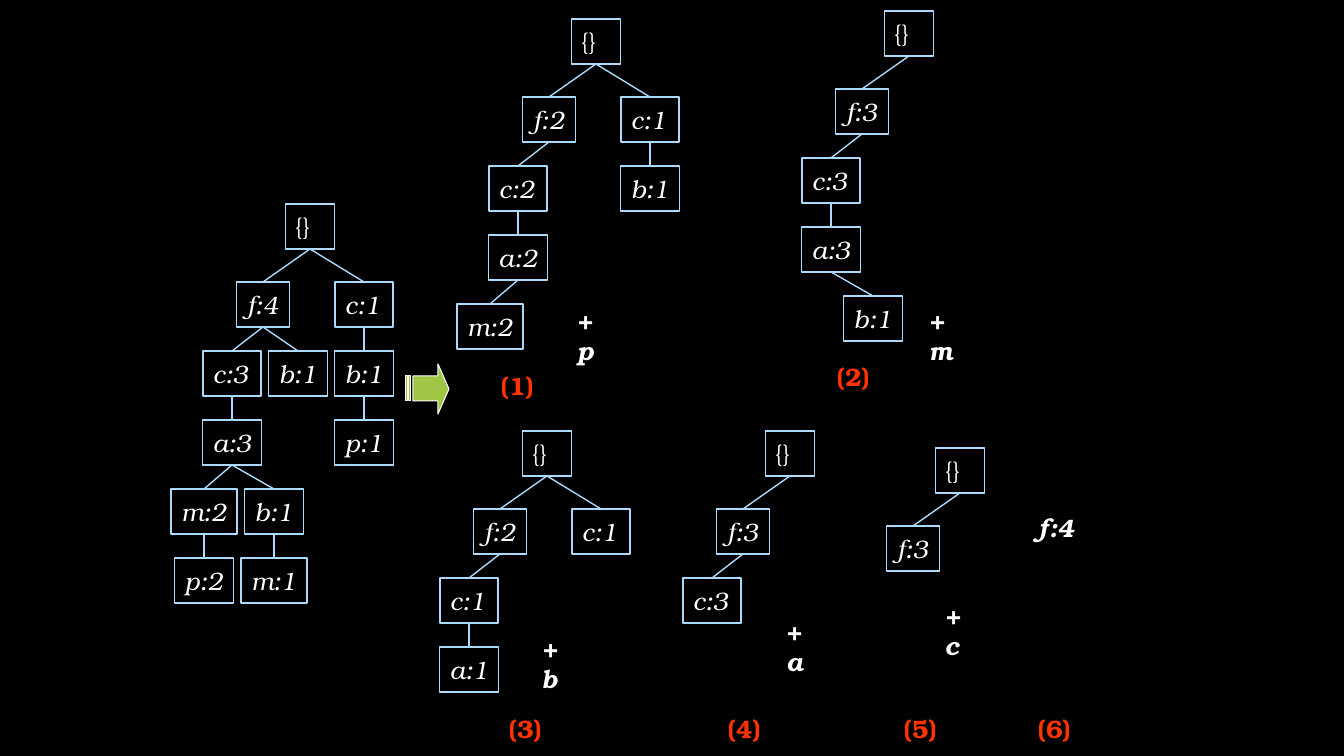
"""Builds a slide of an FP-tree and its six conditional subtrees."""
from lxml import etree
from pptx import Presentation
from pptx.dml.color import RGBColor
from pptx.enum.shapes import MSO_CONNECTOR, MSO_SHAPE
from pptx.enum.text import MSO_ANCHOR, PP_ALIGN
from pptx.oxml.ns import qn
from pptx.util import Pt

RECT, LINE = MSO_SHAPE.RECTANGLE, MSO_CONNECTOR.STRAIGHT
MIDDLE, LEFT = MSO_ANCHOR.MIDDLE, PP_ALIGN.LEFT
PX = 914400 / 100.8
FONT = "TeX Gyre Bonum"
BLACK, WHITE, BLUE, RED, GREEN = "000000", "FFFFFF", "ABDAFC", "FF3300", "9EC544"

NODE_H, FIRST_STEP, STEP = 45, 78, 69
WIDTHS = {"{": 49, "f": 53, "c": 58, "a": 59, "b": 59, "p": 59, "m": 66}

# Each tree: root centre x, root top, nodes as (label, x offset from root, parent index)
TREES = [
    (310, 204, [("{}", 0, None), ("f:4", -47, 0), ("c:1", 54, 0), ("b:1", 54, 2),
                ("p:1", 54, 3), ("c:3", -78, 1), ("b:1", -12, 1), ("a:3", -78, 5),
                ("m:2", -106, 7), ("b:1", -36, 7), ("p:2", -106, 8), ("m:1", -36, 9)]),
    (596, 19, [("{}", 0, None), ("f:2", -47, 0), ("c:1", 54, 0), ("b:1", 54, 2),
               ("c:2", -78, 1), ("a:2", -78, 4), ("m:2", -106, 5)]),
    (909, 11, [("{}", 0, None), ("f:3", -47, 0), ("c:3", -78, 1), ("a:3", -78, 2),
               ("b:1", -36, 3)]),
    (547, 431, [("{}", 0, None), ("f:2", -47, 0), ("c:1", 54, 0), ("c:1", -78, 1),
                ("a:1", -78, 3)]),
    (790, 431, [("{}", 0, None), ("f:3", -47, 0), ("c:3", -78, 1)]),
    (960, 448, [("{}", 0, None), ("f:3", -47, 0)]),
]
SUFFIXES = [("+ p", 567, 296), ("+ m", 919, 296), ("+ b", 532, 624),
            ("+ a", 776, 607), ("+ c", 935, 591)]
SINGLE = ("f:4", 1028, 506)
CAPTIONS = [("(1)", 491, 364), ("(2)", 827, 355), ("(3)", 499, 707),
            ("(4)", 718, 707), ("(5)", 894, 707), ("(6)", 1028, 707)]
ARROW = [
    [(438, 364), (438, 376), (413, 376), (413, 401), (438, 401), (438, 414), (449, 389)],
    [(409, 376), (409, 401), (411, 401), (411, 376)],
    [(406, 376), (406, 401), (408, 401), (408, 376)],
]


def px(*values):
    return [round(v * PX) for v in values]


def rgb(value):
    return RGBColor.from_string(value)


def write(s, text, color=WHITE, bold=False, italic=True, right=0):
    tf = s.text_frame
    tf.word_wrap = True
    tf.vertical_anchor = MIDDLE
    tf.margin_left, tf.margin_right, tf.margin_top, tf.margin_bottom = px(10, right, 0, 0)
    tf.text = text
    p = tf.paragraphs[0]
    p.alignment = LEFT
    font = p.runs[0].font
    font.name, font.size, font.bold, font.italic = FONT, Pt(18), bold, italic
    font.color.rgb = rgb(color)


def add_node(shapes, label, center, top):
    width = WIDTHS[label[0]]
    s = shapes.add_shape(RECT, *px(center - width / 2, top, width, NODE_H))
    s.shadow.inherit = False
    s.fill.background()
    s.line.color.rgb = rgb(BLUE)
    s.line.width = Pt(1)
    write(s, label, italic=label != "{}")


def add_edge(shapes, start, end):
    s = shapes.add_connector(LINE, *px(*start, *end))
    s.line.color.rgb = rgb(BLUE)
    s.line.width = Pt(1)
    etree.SubElement(s._element.spPr, qn("a:effectLst"))


def add_tree(shapes, root_x, root_top, nodes):
    levels, places = [], []
    for label, dx, parent in nodes:
        level = 0 if parent is None else levels[parent] + 1
        top = root_top + (FIRST_STEP + STEP * (level - 1) if level else 0)
        levels.append(level)
        places.append((root_x + dx, top))
        add_node(shapes, label, *places[-1])
        if parent is not None:
            x, y = places[parent]
            add_edge(shapes, (x, y + NODE_H), places[-1])


def add_label(shapes, text, left, top, width, height, **style):
    s = shapes.add_textbox(*px(left, top, width, height))
    write(s, text, bold=True, right=8, **style)


def add_arrow(shapes):
    builder = shapes.build_freeform(*ARROW[0][0], scale=PX)
    for i, outline in enumerate(ARROW):
        if i:
            builder.move_to(*outline[0])
        builder.add_line_segments(outline[1:], close=True)
    s = builder.convert_to_shape()
    s.shadow.inherit = False
    s.fill.solid()
    s.fill.fore_color.rgb = rgb(GREEN)
    s.line.color.rgb = rgb(WHITE)
    s.line.width = Pt(0.75)


def main():
    prs = Presentation()
    prs.slide_width, prs.slide_height = px(1344, 756)
    slide = prs.slides.add_slide(prs.slide_layouts[6])
    slide.background.fill.solid()
    slide.background.fill.fore_color.rgb = rgb(BLACK)
    shapes = slide.shapes
    for tree in TREES:
        add_tree(shapes, *tree)
    add_arrow(shapes)
    for suffix in SUFFIXES:
        add_label(shapes, *suffix, 50, 78)
    add_label(shapes, *SINGLE, 58, 43)
    for caption in CAPTIONS:
        add_label(shapes, *caption, 58, 43, color=RED, italic=False)
    prs.save("out.pptx")


if __name__ == "__main__":
    main()
